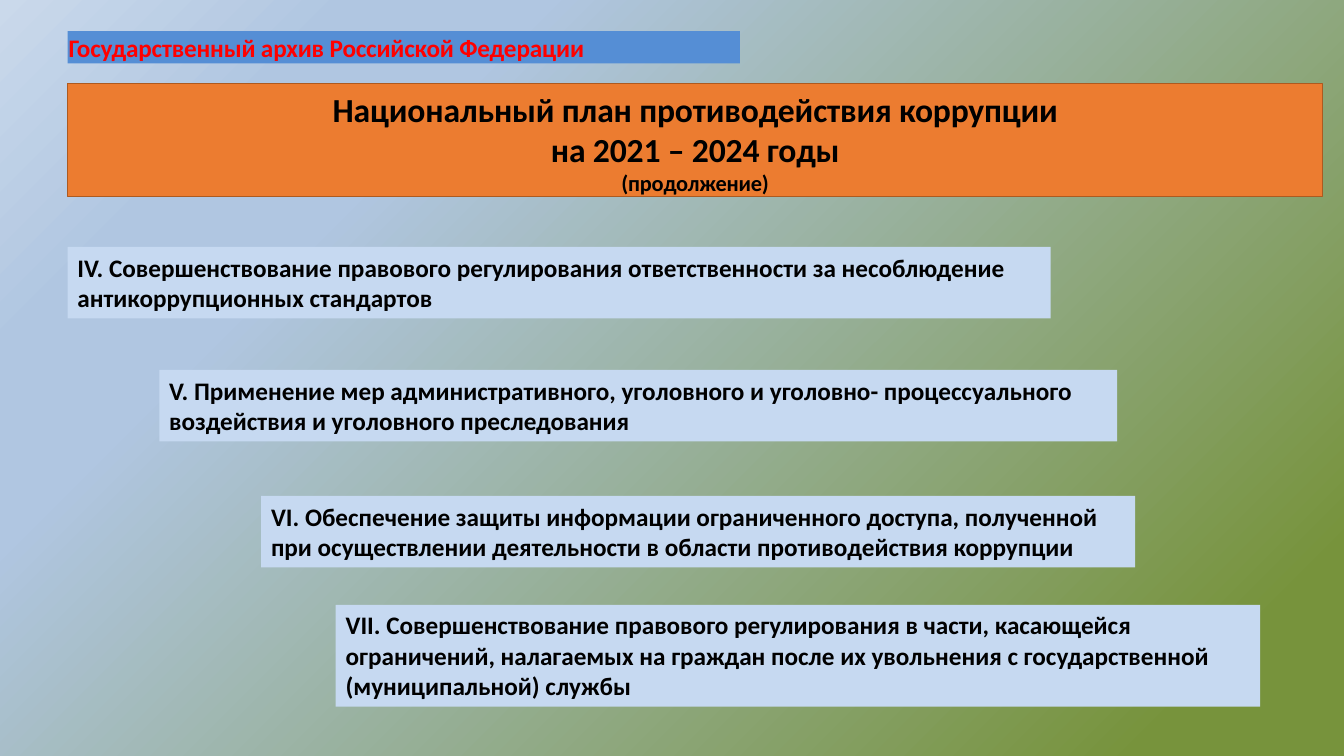
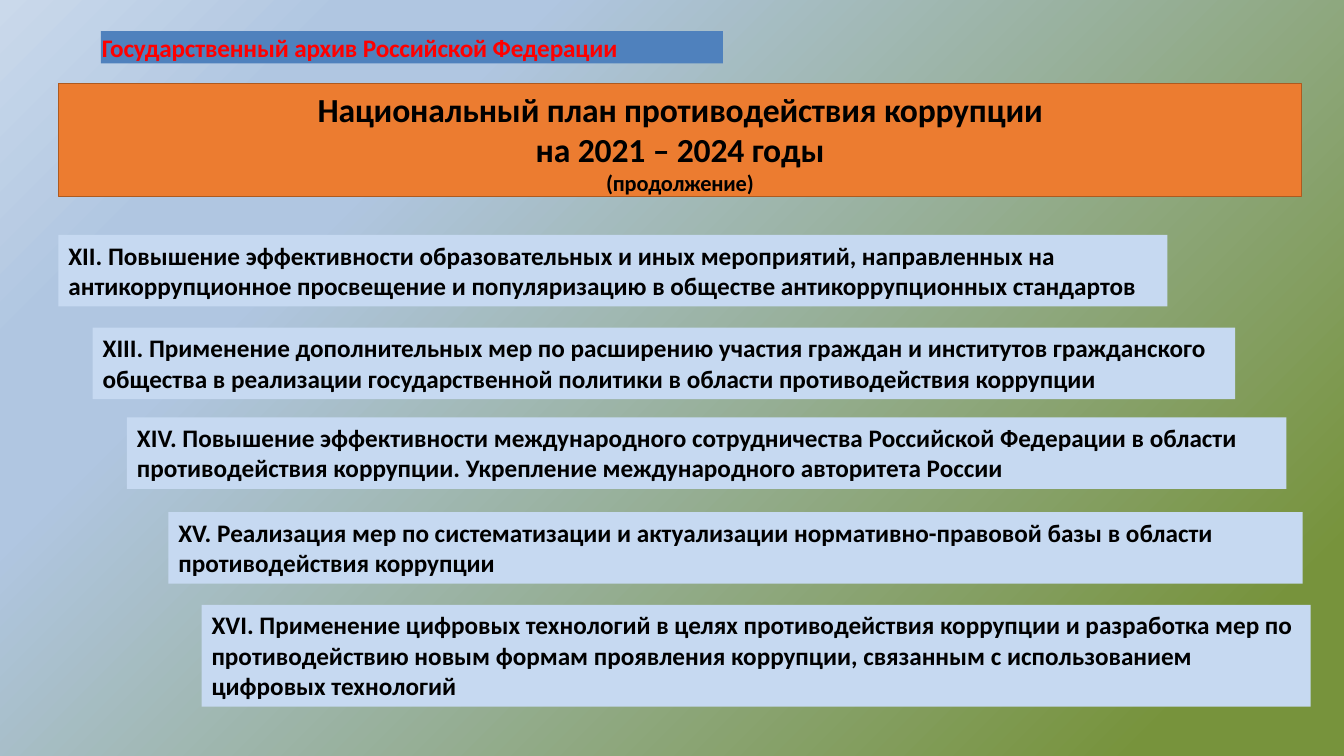
from dataclasses import dataclass

from lxml import etree
from pptx import Presentation
from pptx.dml.color import RGBColor
from pptx.enum.shapes import MSO_SHAPE
from pptx.enum.text import MSO_ANCHOR, MSO_AUTO_SIZE, PP_ALIGN
from pptx.oxml import parse_xml
from pptx.oxml.ns import qn
from pptx.util import Inches, Pt

RECT = MSO_SHAPE.RECTANGLE
TOP = MSO_ANCHOR.TOP
GROW = MSO_AUTO_SIZE.SHAPE_TO_FIT_TEXT
LEFT, CENTER = PP_ALIGN.LEFT, PP_ALIGN.CENTER

# Shared style
FONT = "Calibri"
RED, BLACK = "FF0000", "000000"
ORANGE, BROWN, PALE_BLUE = "EC7C30", "AD5A20", "C6D9F1"
BG_STOPS = ((10, "77933C"), (74, "B0C6E1"), (83, "B0C6E1"), (100, "CAD9EB"))
TIGHT = -10  # letter spacing, hundredths of a point
TEXT_INSETS = (0.1, 0.05, 0.1, 0.05)

ARCHIVE = "Государственный архив Российской Федерации"
TITLE = "Национальный план противодействия коррупции\vна 2021 – 2024 годы\v(продолжение)"
TITLE_SIZES = (24, 24, 16)


@dataclass
class Band:
    left: float
    width: float
    fill: str = ORANGE


@dataclass
class Item:
    left: float
    top: float
    width: float
    text: str
    lines: int = 2


@dataclass
class PlanSlide:
    header: Band
    title: Band
    items: list[Item]


SLIDES = [
    PlanSlide(Band(0.67, 6.67, "558ED5"), Band(0.67, 12.45), [
        Item(0.67, 2.45, 9.75, "IV. Совершенствование правового регулирования ответственности "
             "за несоблюдение антикоррупционных стандартов"),
        Item(1.58, 3.67, 9.5, "V. Применение мер административного, уголовного и уголовно- "
             "процессуального воздействия и уголовного преследования"),
        Item(2.59, 4.92, 8.67, "VI. Обеспечение защиты информации ограниченного доступа, "
             "полученной при осуществлении деятельности в области противодействия коррупции"),
        Item(3.33, 6, 9.17, "VII. Совершенствование правового регулирования в части, "
             "касающейся ограничений, налагаемых на граждан после их увольнения "
             "с государственной (муниципальной) службы", 3),
    ]),
    PlanSlide(Band(1, 6.17, "4F81BD"), Band(0.58, 12.33), [
        Item(0.58, 2.33, 11, "XII. Повышение эффективности образовательных и иных мероприятий, "
             "направленных на антикоррупционное просвещение и популяризацию в обществе "
             "антикоррупционных стандартов"),
        Item(0.92, 3.25, 11.33, "XIII. Применение дополнительных мер по расширению участия "
             "граждан и институтов гражданского общества в реализации государственной "
             "политики в области противодействия коррупции"),
        Item(1.26, 4.14, 11.5, "XIV. Повышение эффективности международного сотрудничества "
             "Российской Федерации в области противодействия коррупции. Укрепление "
             "международного авторитета России"),
        Item(1.67, 5.08, 11.25, "XV. Реализация мер по систематизации и актуализации "
             "нормативно-правовой базы в области противодействия коррупции"),
        Item(2, 6, 11, "XVI. Применение цифровых технологий в целях противодействия коррупции "
             "и разработка мер по противодействию новым формам проявления коррупции, "
             "связанным с использованием цифровых технологий", 3),
    ]),
]


def rgb(color: str) -> RGBColor:
    return RGBColor.from_string(color)


def set_background(master) -> None:
    """Give the master a gradient that spreads from the lower right corner."""
    master.background.fill.solid()
    solid = next(master.element.iter(qn("p:bgPr"))).find(qn("a:solidFill"))
    grad = parse_xml(
        '<a:gradFill xmlns:a="http://schemas.openxmlformats.org/drawingml/2006/main" '
        'rotWithShape="1"><a:gsLst/><a:path path="circle">'
        '<a:fillToRect l="100000" t="100000"/></a:path>'
        '<a:tileRect r="-100000" b="-100000"/></a:gradFill>')
    for pos, color in BG_STOPS:
        gs = etree.SubElement(grad[0], qn("a:gs"), pos=str(pos * 1000))
        etree.SubElement(gs, qn("a:srgbClr"), val=color)
    solid.getparent().replace(solid, grad)


def add_box(s, left: float, top: float, width: float, height: float, fill: str, text: str,
            sizes: tuple = (18,), color: str = BLACK, align=LEFT,
            insets: tuple = TEXT_INSETS, spacing: int = 0, line: str = ""):
    """Draw a filled box; sizes holds one text size per line break."""
    sp = s.shapes.add_shape(RECT, Inches(left), Inches(top), Inches(width), Inches(height))
    sp.shadow.inherit = False
    sp.fill.solid()
    sp.fill.fore_color.rgb = rgb(fill)
    if line:
        sp.line.color.rgb = rgb(line)
        sp.line.width = Pt(0.96)
    else:
        sp.line.fill.background()

    tf = sp.text_frame
    tf.word_wrap = True
    tf.auto_size = GROW
    tf.vertical_anchor = TOP
    tf.margin_left, tf.margin_top, tf.margin_right, tf.margin_bottom = map(Inches, insets)
    p = tf.paragraphs[0]
    p.text = text
    p.alignment = align
    for r, size in zip(p.runs, sizes):
        r.font.name = FONT
        r.font.size = Pt(size)
        r.font.bold = True
        r.font.color.rgb = rgb(color)
        if spacing:
            r.font._element.set("spc", str(spacing))


def add_plan_slide(prs, plan: PlanSlide) -> None:
    s = prs.slides.add_slide(prs.slide_layouts[6])
    # Header and title bands
    add_box(s, plan.header.left, 0.31, plan.header.width, 0.32, plan.header.fill, ARCHIVE,
            color=RED, insets=(0.01, 0.01, 0, 0), spacing=TIGHT)
    add_box(s, plan.title.left, 0.83, plan.title.width, 1.12, plan.title.fill, TITLE,
            TITLE_SIZES, align=CENTER, insets=(0, 0.05, 0, 0), spacing=TIGHT, line=BROWN)
    # Stepped list of plan sections
    for item in plan.items:
        add_box(s, item.left, item.top, item.width, 0.11 + 0.3 * item.lines, PALE_BLUE, item.text)


def main() -> None:
    prs = Presentation()
    prs.slide_width, prs.slide_height = Inches(13.33), Inches(7.5)
    set_background(prs.slide_master)
    for plan in SLIDES:
        add_plan_slide(prs, plan)
    prs.save("out.pptx")


if __name__ == "__main__":
    main()
